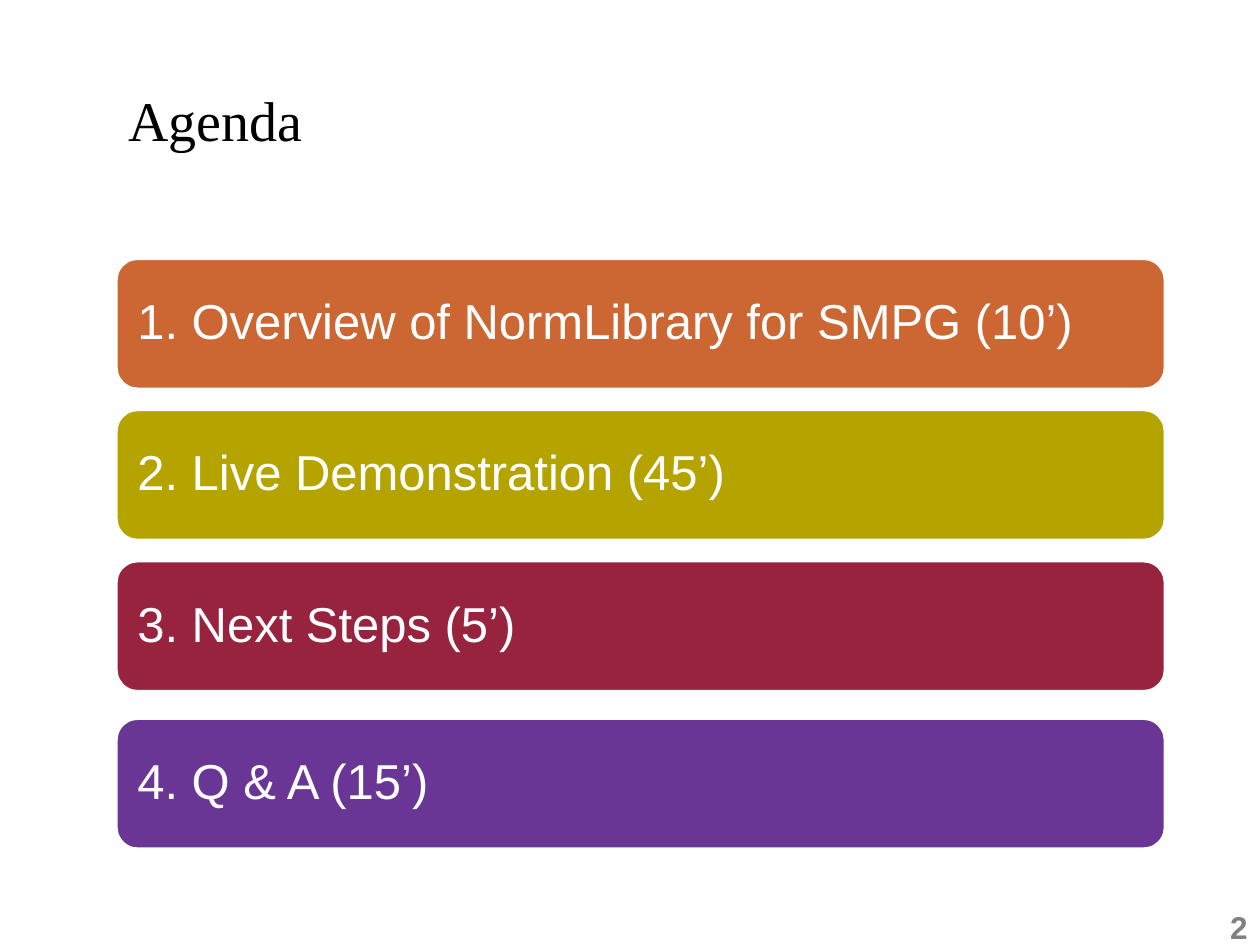
from dataclasses import dataclass
from pptx import Presentation
from pptx.dml.color import RGBColor as Rgb
from pptx.enum.shapes import MSO_SHAPE as Kind
from pptx.enum.text import MSO_ANCHOR as Anchor, PP_ALIGN as Align
from pptx.util import Inches, Pt


@dataclass(frozen=True)
class Theme:
    serif: str = "Times New Roman"
    sans: str = "Arial"
    ink: str = "000000"
    white: str = "FFFFFF"
    grey: str = "808080"
    title: int = 32
    item: int = 28
    page: int = 18


def write(frame, text, font, size, color, bold=False):
    """Add one styled run to the frame's first paragraph and return the paragraph."""
    frame.word_wrap = True
    para = frame.paragraphs[0]
    run = para.add_run()
    run.text = text
    run.font.name = font
    run.font.size = Pt(size)
    run.font.bold = bold
    run.font.color.rgb = Rgb.from_string(color)
    return para


theme = Theme()
deck = Presentation()
deck.slide_width, deck.slide_height = Inches(10), Inches(7.5)
slide = deck.slides.add_slide(deck.slide_layouts[6])
shapes = slide.shapes

# Shared column and row rhythm
left, wide = Inches(0.92), Inches(8.33)
top, tall, step = Inches(2.05), Inches(1.04), Inches(1.2)
pad = Inches(0.12)

# Title
box = shapes.add_textbox(left, Inches(0.58), wide, Inches(1.25))
box.text_frame.margin_top = Inches(0.1)
write(box.text_frame, "Agenda", theme.serif, theme.title, theme.ink)

# Agenda bars: the closing one sits slightly lower
items = [
    ("1. Overview of NormLibrary for SMPG (10’)", "CC6633", 0),
    ("2. Live Demonstration (45’)", "B5A300", 0),
    ("3. Next Steps (5’)", "97233F", 0),
    ("4. Q & A (15’)", "693695", 0.05),
]
for row, (text, color, drop) in enumerate(items):
    y = top + row * step + Inches(drop)
    bar = shapes.add_shape(Kind.ROUNDED_RECTANGLE, left, y, wide, tall)
    bar.shadow.inherit = False
    bar.fill.solid()
    bar.fill.fore_color.rgb = Rgb.from_string(color)
    bar.line.color.rgb = Rgb.from_string(theme.white)
    bar.line.width = Pt(2)
    frame = bar.text_frame
    frame.margin_left = frame.margin_right = pad
    frame.margin_top = frame.margin_bottom = pad
    frame.vertical_anchor = Anchor.MIDDLE
    para = write(frame, text, theme.sans, theme.item, theme.white)
    para.alignment = Align.LEFT
    para.line_spacing = 0.9

# Page number
box = shapes.add_textbox(Inches(9.17), Inches(7.23), Inches(0.83), Inches(0.25))
box.text_frame.vertical_anchor = Anchor.MIDDLE
para = write(box.text_frame, "2", theme.sans, theme.page, theme.grey, bold=True)
para.alignment = Align.RIGHT

deck.save("out.pptx")
